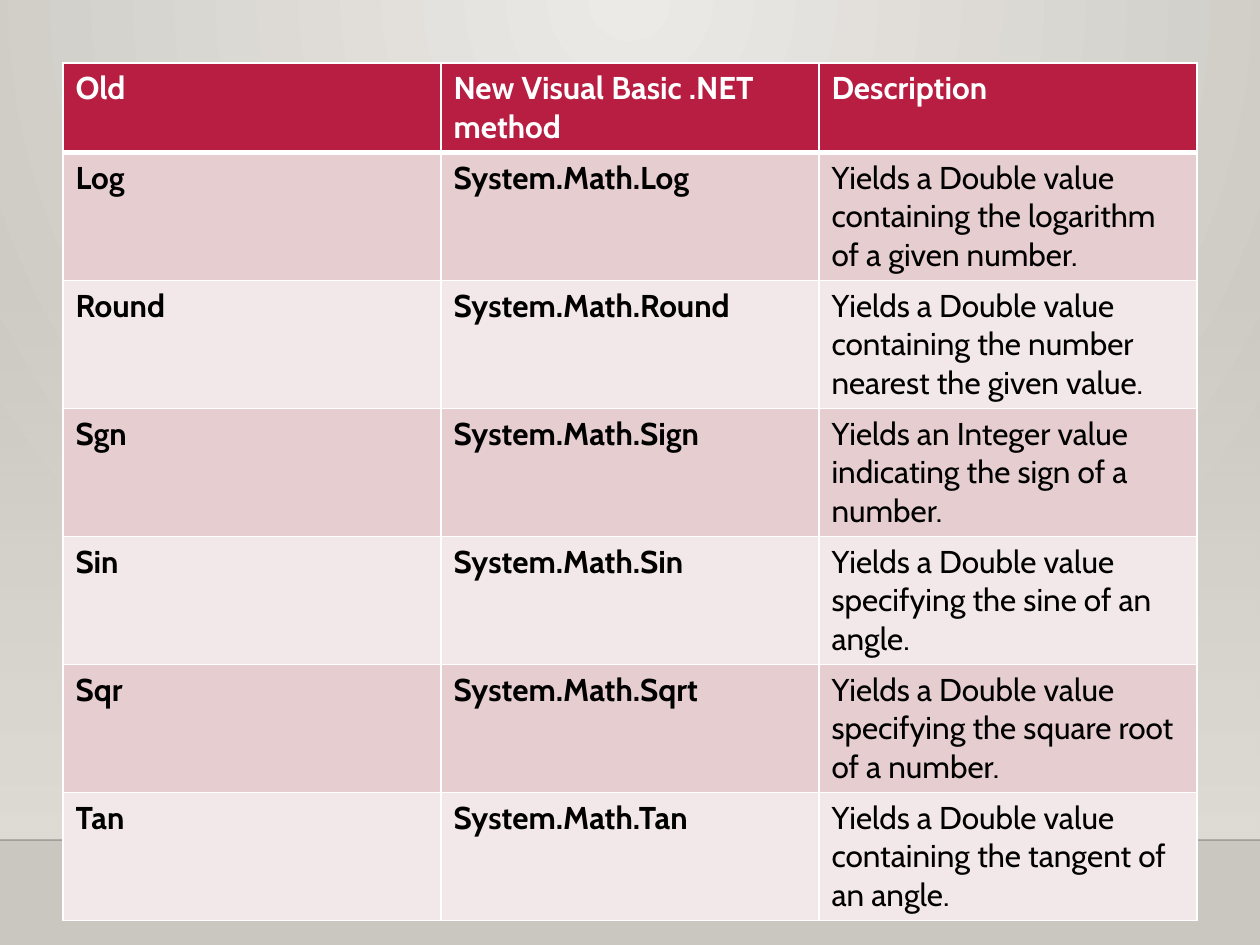
from lxml import etree
from pptx import Presentation
from pptx.dml.color import RGBColor
from pptx.enum.shapes import MSO_CONNECTOR, MSO_SHAPE
from pptx.oxml.ns import qn
from pptx.util import Pt

HEADER = ("Old", "New Visual Basic .NET method", "Description")
METHODS = [
    ("Log", "System.Math.Log",
     "Yields a Double value containing the logarithm of a given number."),
    ("Round", "System.Math.Round",
     "Yields a Double value containing the number nearest the given value."),
    ("Sgn", "System.Math.Sign",
     "Yields an Integer value indicating the sign of a number."),
    ("Sin", "System.Math.Sin",
     "Yields a Double value specifying the sine of an angle."),
    ("Sqr", "System.Math.Sqrt",
     "Yields a Double value specifying the square root of a number."),
    ("Tan", "System.Math.Tan",
     "Yields a Double value containing the tangent of an angle."),
]

STRAIGHT = MSO_CONNECTOR.STRAIGHT
RECTANGLE = MSO_SHAPE.RECTANGLE
WHITE = RGBColor(0xFF, 0xFF, 0xFF)
BLACK = RGBColor(0x00, 0x00, 0x00)
CRIMSON = RGBColor(0xB7, 0x1E, 0x42)
BANDS = (RGBColor(0xE6, 0xCD, 0xCF), RGBColor(0xF3, 0xE8, 0xE9))
GLOW = RGBColor(0xEC, 0xEA, 0xE7)
STONE = RGBColor(0xCA, 0xC7, 0xC1)
WALL = RGBColor(0xDF, 0xDB, 0xD5)
FONT = "Cabin"

EMU_PER_PX = 914400 // 126
SLIDE_WIDTH, SLIDE_HEIGHT = 1260, 945
MARGIN = 63
COLUMN_WIDTH = 378
HEADER_HEIGHT, ROW_HEIGHT = 89, 128
WALL_TOP, FLOOR_TOP = 277, 840


def px(length):
    return length * EMU_PER_PX


def set_stops(fill, colors):
    fill.gradient()
    for stop, color in zip(fill.gradient_stops, colors):
        stop.color.rgb = color


def set_opacity(color_element, percent):
    etree.SubElement(color_element, qn("a:alpha"), val=str(percent * 1000))


def paint_background(slide):
    """Radial glow from the middle of the top edge."""
    set_stops(slide.background.fill, (GLOW, STONE))
    gradient = slide.element.find(".//" + qn("a:gradFill"))
    gradient.remove(gradient.find(qn("a:lin")))
    path = etree.SubElement(gradient, qn("a:path"), path="circle")
    etree.SubElement(path, qn("a:fillToRect"), l="43000", t="0", r="43000", b="100000")


def add_wall(slide):
    wall = slide.shapes.add_shape(
        RECTANGLE, 0, px(WALL_TOP), px(SLIDE_WIDTH), px(FLOOR_TOP - WALL_TOP))
    wall.shadow.inherit = False
    wall.line.fill.background()
    set_stops(wall.fill, (WALL, WALL))
    wall.fill.gradient_angle = 270
    set_opacity(wall.element.spPr.find(".//" + qn("a:srgbClr")), 0)


def add_floor_line(slide):
    line = slide.shapes.add_connector(
        STRAIGHT, 0, px(FLOOR_TOP), px(SLIDE_WIDTH), px(FLOOR_TOP))
    line.line.color.rgb = BLACK
    line.line.width = Pt(1)
    properties = line.element.spPr
    set_opacity(properties.find(".//" + qn("a:srgbClr")), 20)
    etree.SubElement(properties, qn("a:effectLst"))


def set_borders(cell, widths):
    """White borders, with widths in points for left, right, top and bottom."""
    properties = cell._tc.get_or_add_tcPr()
    for index, (side, width) in enumerate(zip(("lnL", "lnR", "lnT", "lnB"), widths)):
        border = etree.Element(qn("a:" + side), w=str(Pt(width)))
        fill = etree.SubElement(border, qn("a:solidFill"))
        etree.SubElement(fill, qn("a:srgbClr"), val=str(WHITE))
        properties.insert(index, border)


def fill_cell(cell, text, fill_color, font_color, bold, widths):
    cell.fill.solid()
    cell.fill.fore_color.rgb = fill_color
    cell.text_frame.text = text
    font = cell.text_frame.paragraphs[0].runs[0].font
    font.name = FONT
    font.size = Pt(18)
    font.bold = bold
    font.color.rgb = font_color
    set_borders(cell, widths)


def add_method_table(slide):
    rows = [HEADER] + METHODS
    table = slide.shapes.add_table(
        len(rows), len(HEADER), px(MARGIN), px(MARGIN),
        px(COLUMN_WIDTH * len(HEADER)),
        px(HEADER_HEIGHT + ROW_HEIGHT * len(METHODS))).table
    for column in table.columns:
        column.width = px(COLUMN_WIDTH)
    for row_index, texts in enumerate(rows):
        is_header = row_index == 0
        table.rows[row_index].height = px(HEADER_HEIGHT if is_header else ROW_HEIGHT)
        fill_color = CRIMSON if is_header else BANDS[(row_index - 1) % 2]
        font_color = WHITE if is_header else BLACK
        widths = (1, 1, 3 if row_index == 1 else 1, 3 if is_header else 1)
        for column_index, text in enumerate(texts):
            bold = is_header or column_index < 2
            fill_cell(table.cell(row_index, column_index), text,
                      fill_color, font_color, bold, widths)


def main():
    presentation = Presentation()
    presentation.slide_width = px(SLIDE_WIDTH)
    presentation.slide_height = px(SLIDE_HEIGHT)
    slide = presentation.slides.add_slide(presentation.slide_layouts[6])
    paint_background(slide)
    add_wall(slide)
    add_floor_line(slide)
    add_method_table(slide)
    presentation.save("out.pptx")


if __name__ == "__main__":
    main()
